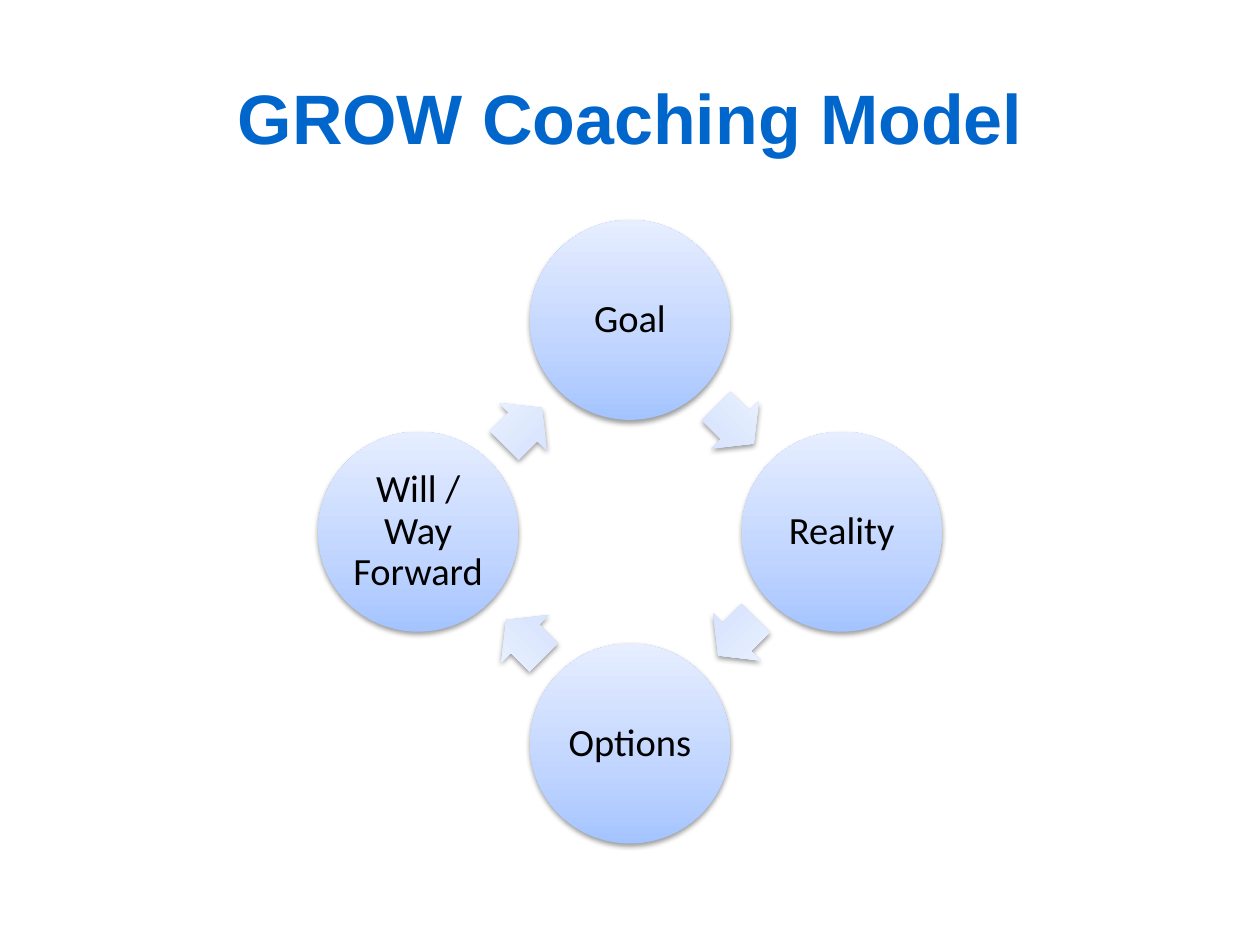
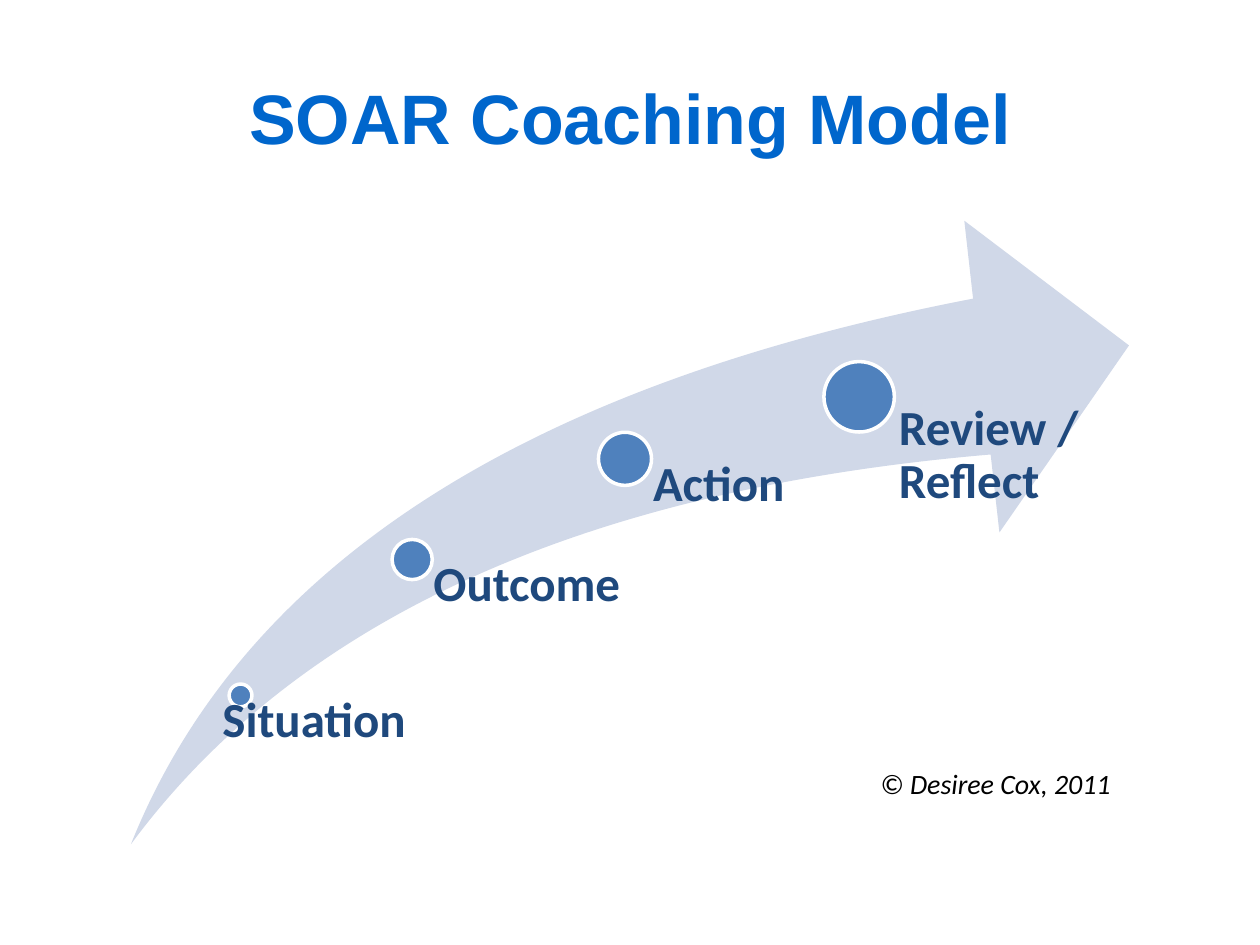
from copy import deepcopy
from dataclasses import dataclass
from math import cos, radians, sin

from lxml import etree
from pptx import Presentation
from pptx import util as u
from pptx.dml.color import RGBColor
from pptx.enum import shapes, text
from pptx.oxml import ns


# Colours, fonts and type sizes
@dataclass(frozen=True)
class Theme:
    title_font: str = "Arial"
    body_font: str = "Calibri"
    title_colour: str = "0066CC"
    text_colour: str = "000000"
    label_colour: str = "1F497D"
    swoosh_colour: str = "D0D8E8"
    dot_colour: str = "4F81BD"
    dot_outline: str = "FFFFFF"
    circle_gradient: tuple = ((0, "A4C4FF"), (0.35, "BFD4FF"), (1, "E6EEFF"))
    arrow_gradient: tuple = ((0, "CDDDFE"), (0.35, "DBE6FE"), (1, "F0F5FF"))
    title_size: int = 40
    circle_size: int = 22
    label_size: int = 28
    credit_size: int = 16


class SlideBuilder:
    """Adds styled elements to the current slide; lengths are in centimetres."""

    def __init__(self, theme):
        self.theme = theme
        self.presentation = Presentation()
        self.presentation.slide_width = u.Cm(25.4)
        self.presentation.slide_height = u.Cm(19.05)
        self.slide = None

    def new_slide(self, title):
        self.slide = self.presentation.slides.add_slide(self.presentation.slide_layouts[5])
        shape = self.slide.shapes.title
        shape.left, shape.top = u.Cm(1.27), u.Cm(0.76)
        shape.width, shape.height = u.Cm(22.86), u.Cm(3.18)
        shape.text_frame.vertical_anchor = text.MSO_ANCHOR.MIDDLE
        paragraph = self.add_words(shape, title, self.theme.title_size, self.theme.title_colour,
                                   font_name=self.theme.title_font, bold=True)
        paragraph.alignment = text.PP_ALIGN.CENTER

    def add_words(self, shape, words, size, colour, font_name=None, bold=False, italic=False):
        paragraph = shape.text_frame.paragraphs[0]
        run = paragraph.add_run()
        run.text = words
        run.font.name = font_name or self.theme.body_font
        run.font.size = u.Pt(size)
        run.font.bold, run.font.italic = bold, italic
        run.font.color.rgb = RGBColor.from_string(colour)
        return paragraph

    def preset(self, kind, left, top, width, height):
        shape = self.slide.shapes.add_shape(kind, u.Cm(left), u.Cm(top), u.Cm(width), u.Cm(height))
        shape.shadow.inherit = False
        shape.line.fill.background()
        return shape

    def centred_preset(self, kind, x, y, width, height):
        return self.preset(kind, x - width / 2, y - height / 2, width, height)

    def fill_solid(self, shape, colour):
        shape.fill.solid()
        shape.fill.fore_color.rgb = RGBColor.from_string(colour)

    def fill_gradient(self, shape, stops):
        shape.fill.gradient()
        shape.fill.gradient_angle = 90
        stop_list = shape._element.spPr.find(".//" + ns.qn("a:gsLst"))
        while len(stop_list) < len(stops):
            stop_list.append(deepcopy(stop_list[0]))
        for stop, (position, colour) in zip(shape.fill.gradient_stops, stops):
            stop.position = position
            stop.color.rgb = RGBColor.from_string(colour)

    def add_shadow(self, shape):
        effects = shape._element.spPr.find(ns.qn("a:effectLst"))
        shadow = etree.SubElement(effects, ns.qn("a:outerShdw"), blurRad=str(u.Pt(3.1)),
                                  dist=str(u.Pt(1.6)), dir="5400000", rotWithShape="0")
        colour = etree.SubElement(shadow, ns.qn("a:srgbClr"), val="000000")
        etree.SubElement(colour, ns.qn("a:alpha"), val="38000")

    def set_margins(self, frame, left, others):
        frame.margin_left = u.Cm(left)
        frame.margin_top = frame.margin_right = frame.margin_bottom = u.Cm(others)

    def circle(self, words, x, y, diameter):
        shape = self.centred_preset(shapes.MSO_SHAPE.OVAL, x, y, diameter, diameter)
        self.fill_gradient(shape, self.theme.circle_gradient)
        self.add_shadow(shape)
        frame = shape.text_frame
        frame.word_wrap = True
        frame.vertical_anchor = text.MSO_ANCHOR.MIDDLE
        self.set_margins(frame, 0.08, 0.08)
        paragraph = self.add_words(shape, words, self.theme.circle_size, self.theme.text_colour)
        paragraph.alignment = text.PP_ALIGN.CENTER
        paragraph.line_spacing = 0.9

    def cycle_arrow(self, x, y, rotation):
        shape = self.centred_preset(shapes.MSO_SHAPE.RIGHT_ARROW, x, y, 1.07, 1.35)
        shape.adjustments[0], shape.adjustments[1] = 0.6, 0.5
        shape.rotation = rotation
        self.fill_gradient(shape, self.theme.arrow_gradient)
        self.add_shadow(shape)

    def swoosh(self, left, top, width, height):
        shape = self.preset(shapes.MSO_SHAPE.SWOOSH_ARROW, left, top, width, height)
        shape.adjustments[0], shape.adjustments[1] = 0.25, 0.25
        self.fill_solid(shape, self.theme.swoosh_colour)

    def dot(self, x, y, diameter):
        shape = self.centred_preset(shapes.MSO_SHAPE.OVAL, x, y, diameter, diameter)
        self.fill_solid(shape, self.theme.dot_colour)
        shape.line.color.rgb = RGBColor.from_string(self.theme.dot_outline)
        shape.line.width = u.Pt(2)

    def text_box(self, left, top, width, height):
        return self.slide.shapes.add_textbox(u.Cm(left), u.Cm(top), u.Cm(width), u.Cm(height))

    def label(self, words, left, top, width, height, indent):
        shape = self.text_box(left, top, width, height)
        shape.text_frame.word_wrap = True
        self.set_margins(shape.text_frame, indent, 0)
        paragraph = self.add_words(shape, words, self.theme.label_size,
                                   self.theme.label_colour, bold=True)
        paragraph.line_spacing = 0.9

    def credit(self, words, left, top, width, height):
        shape = self.text_box(left, top, width, height)
        shape.text_frame.word_wrap = False
        shape.text_frame.auto_size = text.MSO_AUTO_SIZE.SHAPE_TO_FIT_TEXT
        self.add_words(shape, words, self.theme.credit_size, self.theme.text_colour, italic=True)


def build_grow(builder):
    builder.new_slide("GROW Coaching Model")
    centre_x, centre_y = 12.7, 10.72

    def on_ring(radius, angle):
        return (centre_x + radius * cos(radians(angle)),
                centre_y + radius * sin(radians(angle)))

    # Four steps clockwise from the top, each followed by an arrow
    for index, step in enumerate(("Goal", "Reality", "Options", "Will / Way Forward")):
        angle = 90 * index - 90
        builder.circle(step, *on_ring(4.27, angle), 4.03)
        builder.cycle_arrow(*on_ring(3.02, angle + 44.5), 45 + 90 * index)


def build_soar(builder):
    builder.new_slide("SOAR Coaching Model")
    top, height = 4.45, 12.57
    bottom = top + height
    builder.swoosh(2.64, top, 20.12, height)

    # Dot centre and diameter, then label left, top, width and bottom
    steps = (
        ("Situation", (4.85, 14.02, 0.46), (4.24, 14.02, 4.65, bottom)),
        ("Outcome", (8.31, 11.28, 0.81), (8.31, 11.28, 4.22, bottom)),
        ("Action", (12.6, 9.25, 1.07), (12.6, 9.25, 4.22, bottom)),
        ("Review / Reflect", (17.32, 8, 1.42), (17.37, 8.13, 5.72, 10.57)),
    )
    for step, dot, (label_left, label_top, label_width, label_bottom) in steps:
        builder.dot(*dot)
        builder.label(step, label_left, label_top, label_width,
                      label_bottom - label_top, indent=0.53 * dot[2])

    builder.credit("© Desiree Cox, 2011", 17.5, 15.32, 5.21, 0.94)


def main():
    builder = SlideBuilder(Theme())
    build_grow(builder)
    build_soar(builder)
    builder.presentation.save("out.pptx")


if __name__ == "__main__":
    main()
